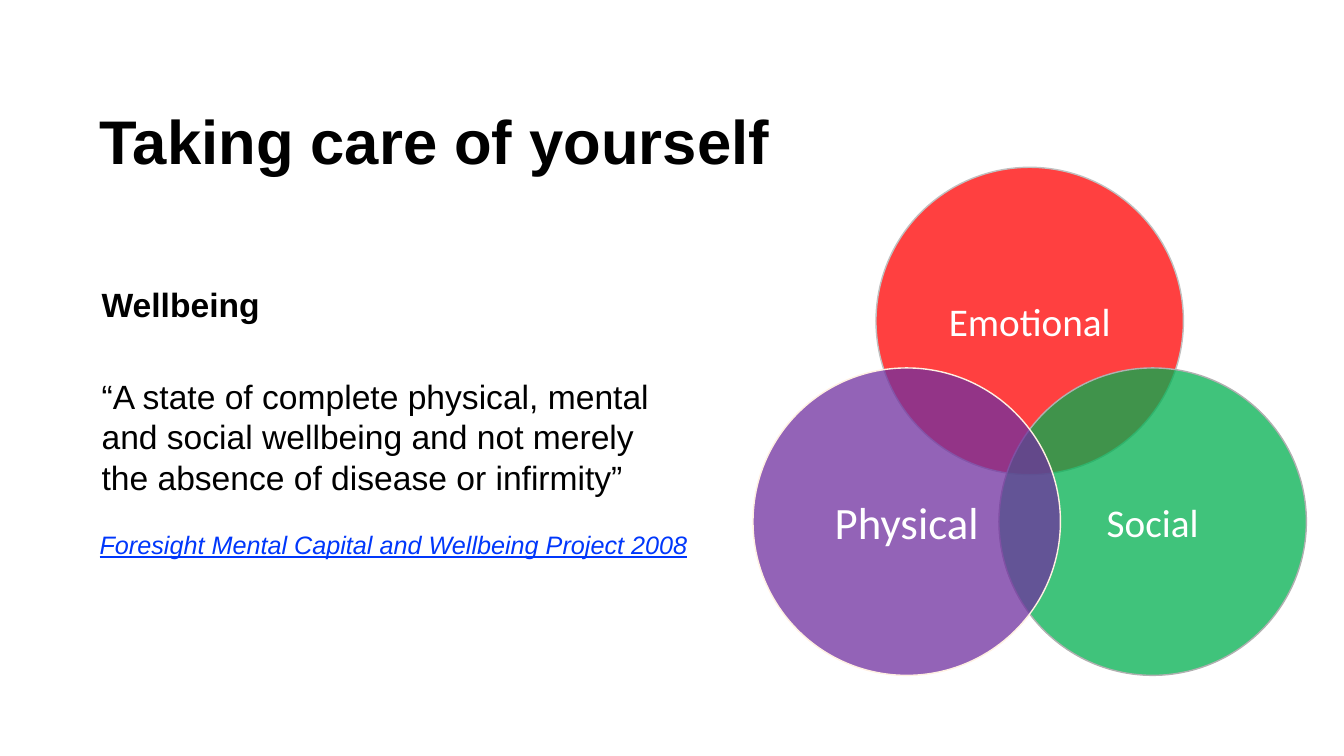
from dataclasses import dataclass, field

from lxml.etree import SubElement as Sub
from pptx import Presentation as Deck
from pptx.dml.color import RGBColor as Rgb
from pptx.enum.shapes import MSO_SHAPE as Kind
from pptx.enum.text import MSO_ANCHOR as Anchor, PP_ALIGN as Align
from pptx.oxml.ns import qn
from pptx.slide import Slide
from pptx.text.text import TextFrame as Frame
from pptx.util import Inches, Pt

# The grid has square cells of a tenth of an inch.
COLS, ROWS = 133.33, 75
SIZE = 30.5                   # circle diameter
APEX = (86.9, 16.6)           # corner of the top circle
STEP, DROP = 0.4 * SIZE, 19.9  # shift of the lower circles
ALPHA = 75                    # circle opacity, percent


@dataclass
class Circle:
    label: str
    fill: str
    line: str
    side: int  # -1 left, 0 top, 1 right
    size: int = 28


@dataclass
class Note:
    text: str
    box: tuple[float, float, float, float]
    style: dict = field(default_factory=dict)


CIRCLES = [
    Circle("Emotional", "FF0000", "C0C0C0", 0),
    Circle("Social", "00B050", "B0B0B0", 1),
    Circle("Physical", "7030A0", "FFF0E2", -1, 32),
]
TITLE = Note("Taking care of yourself", (8.9, 10.5, 86.8, 14.5),
             {"size": 44, "bold": True})
NOTES = [
    Note("Wellbeing", (9.1, 27.7, 60.8, 5), {"bold": True}),
    Note("“A state of complete physical, mental and social wellbeing "
         "and not merely the absence of disease or infirmity”",
         (9.1, 36.8, 57.3, 13.1)),
    Note("Foresight Mental Capital and Wellbeing Project 2008",
         (8.9, 52, 62.4, 4),
         {"size": 18, "color": "0037FB", "italic": True, "underline": True}),
]
BASE = {"name": "Arial", "size": 24, "color": "000000"}


def cell(count: float) -> int:
    return Inches(count / 10)


def hue(code: str) -> Rgb:
    return Rgb.from_string(code)


def write(frame: Frame, text: str, style: dict) -> None:
    """Fill the frame with one paragraph, in BASE changed by style."""
    frame.word_wrap = True
    para = frame.paragraphs[0]
    run = para.add_run()
    run.text = text
    for key, value in (BASE | style).items():
        if key == "color":
            run.font.color.rgb = hue(value)
        else:
            setattr(run.font, key, Pt(value) if key == "size" else value)


def draw(slide: Slide, ring: Circle) -> None:
    left = APEX[0] + ring.side * STEP
    top = APEX[1] + abs(ring.side) * DROP
    shape = slide.shapes.add_shape(
        Kind.OVAL, *map(cell, (left, top, SIZE, SIZE)))
    shape.shadow.inherit = False
    shape.fill.solid()
    shape.fill.fore_color.rgb = hue(ring.fill)
    tint = shape.fill._xPr.find(qn("a:solidFill"))[0]
    Sub(tint, qn("a:alpha"), val=str(ALPHA * 1000))
    shape.line.color.rgb = hue(ring.line)
    shape.line.width = Pt(1)
    frame = shape.text_frame
    write(frame, ring.label,
          {"name": "Calibri", "size": ring.size, "color": "FFFFFF"})
    frame.vertical_anchor = Anchor.MIDDLE
    frame.paragraphs[0].alignment = Align.CENTER


def head(slide: Slide, note: Note) -> None:
    title = slide.shapes.title
    for key, value in zip(("left", "top", "width", "height"), note.box):
        setattr(title, key, cell(value))
    write(title.text_frame, note.text, note.style)
    title.text_frame.vertical_anchor = Anchor.TOP
    para = title.text_frame.paragraphs[0]
    para.alignment = Align.LEFT
    para.line_spacing = 0.9


def main() -> None:
    deck = Deck()
    deck.slide_width, deck.slide_height = cell(COLS), cell(ROWS)
    slide = deck.slides.add_slide(deck.slide_layouts.get_by_name("Title Only"))
    head(slide, TITLE)
    for ring in CIRCLES:
        draw(slide, ring)
    for note in NOTES:
        box = slide.shapes.add_textbox(*map(cell, note.box))
        write(box.text_frame, note.text, note.style)
    deck.save("out.pptx")


if __name__ == "__main__":
    main()
